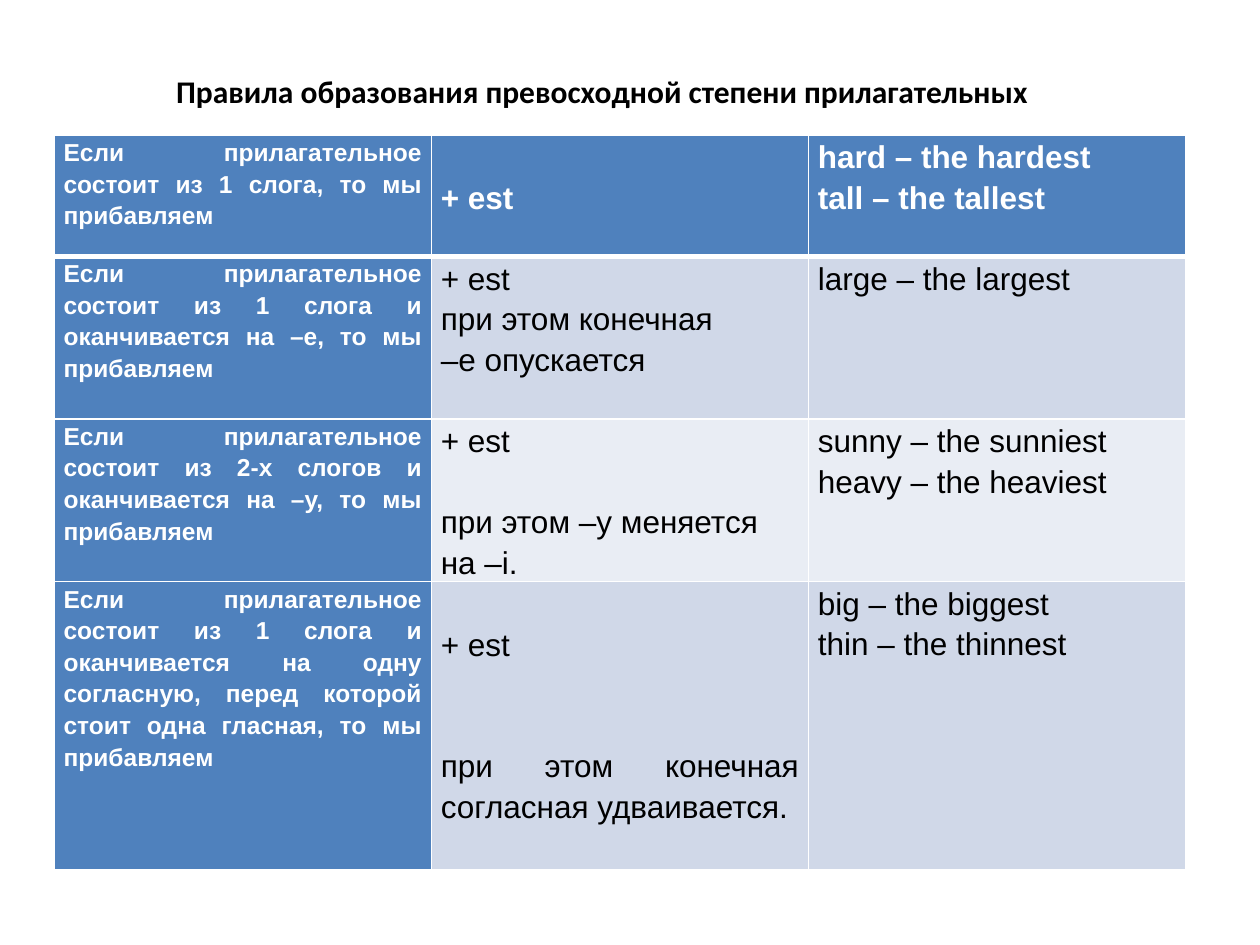
from pptx import Presentation
from pptx.dml.color import RGBColor
from pptx.enum.text import MSO_ANCHOR as Anchor, PP_ALIGN as Align
from pptx.oxml import parse_xml
from pptx.oxml.ns import nsdecls
from pptx.util import Inches, Pt

WIDTH, HEIGHT = 10, 7.5
BLUE, PALE, LIGHT = "4F81BD", "D0D8E8", "E9EDF4"
WHITE, BLACK = "FFFFFF", "000000"
LINE = 23.2  # height of one line of 18 pt text, in points
ROW_HEIGHTS = [0.96, 1.29, 1.29, 2.28]
COLUMN_SIZES = [14, 18, 18]  # text size of the rule, ending and example columns

TITLE = "Правила образования превосходной степени прилагательных"

# A cell is a list of (lines left free above, text); a row is rule, ending, examples
RULES = [
    [[(0, "Если прилагательное состоит из 1 слога, то мы прибавляем")],
     [(1, "+ est")],
     [(0, "hard – the hardest"), (0, "tall – the tallest")]],
    [[(0, "Если прилагательное состоит из 1 слога и оканчивается на –е, "
          "то мы прибавляем")],
     [(0, "+ est"), (0, "при этом конечная"), (0, "–е опускается")],
     [(0, "large – the largest")]],
    [[(0, "Если прилагательное состоит из 2-х слогов и оканчивается на –y, "
          "то мы прибавляем")],
     [(0, "+ est"), (1, "при этом –y меняется"), (0, "на –i.")],
     [(0, "sunny – the sunniest"), (0, "heavy – the heaviest")]],
    [[(0, "Если прилагательное состоит из 1 слога и оканчивается на одну согласную, "
          "перед которой стоит одна гласная, то мы прибавляем")],
     [(1, "+ est"), (2, "при этом конечная согласная удваивается.")],
     [(0, "big – the biggest"), (0, "thin – the thinnest")]],
]


def color(value):
    return RGBColor.from_string(value)


def write(paragraph, text, size=18, font="Arial", ink=BLACK, bold=False,
          align=None, spacing=None, before=None):
    paragraph.alignment = align
    paragraph.line_spacing = spacing
    if before:
        paragraph.space_before = Pt(before)
    run = paragraph.add_run()
    run.text = text
    run.font.size, run.font.name, run.font.bold = Pt(size), font, bold
    run.font.color.rgb = color(ink)


def set_borders(cell, top=1, bottom=1):
    """White borders on all sides; widths in points."""
    properties = cell._tc.get_or_add_tcPr()
    widths = {"L": 1, "R": 1, "T": top, "B": bottom}
    # Borders come before the fill in the cell's properties
    for index, (side, width) in enumerate(widths.items()):
        properties.insert(index, parse_xml(
            f'<a:ln{side} {nsdecls("a")} w="{Pt(width)}">'
            f'<a:solidFill><a:srgbClr val="{WHITE}"/></a:solidFill></a:ln{side}>'))


def fill_cell(cell, lines, background, **text_format):
    cell.fill.solid()
    cell.fill.fore_color.rgb = color(background)
    cell.vertical_anchor = Anchor.TOP
    cell.margin_left = cell.margin_right = Inches(0.075)
    # Free lines above the first paragraph become the top margin
    first_gap = lines[0][0]
    cell.margin_top, cell.margin_bottom = Pt(first_gap * LINE), 0
    frame = cell.text_frame
    for index, (gap, text) in enumerate(lines):
        paragraph = frame.add_paragraph() if index else frame.paragraphs[0]
        write(paragraph, text, align=Align.JUSTIFY, spacing=1.15,
              before=gap * LINE if index else None, **text_format)


def add_title(slide, left, top, width, height):
    box = slide.shapes.add_textbox(*map(Inches, (left, top, width, height)))
    box.text_frame.word_wrap = False
    write(box.text_frame.paragraphs[0], TITLE, font="Calibri", bold=True)


def add_rules_table(slide, left, top, width, height):
    table = slide.shapes.add_table(
        len(RULES), len(COLUMN_SIZES),
        *map(Inches, (left, top, width, height))).table
    for column in table.columns:
        column.width = Inches(width / len(COLUMN_SIZES))

    for row_index, (row, contents) in enumerate(zip(table.rows, RULES)):
        row.height = Inches(height * ROW_HEIGHTS[row_index] / sum(ROW_HEIGHTS))
        band = PALE if row_index % 2 else LIGHT
        for column_index, (cell, lines) in enumerate(zip(row.cells, contents)):
            # The first row and the first column are headings
            heading = row_index == 0 or column_index == 0
            fill_cell(cell, lines, BLUE if heading else band,
                      size=COLUMN_SIZES[column_index],
                      ink=WHITE if heading else BLACK, bold=heading)
            # A thick line parts the first row from the second
            set_borders(cell, top=3 if row_index == 1 else 1,
                        bottom=3 if row_index == 0 else 1)


def main():
    presentation = Presentation()
    presentation.slide_width = Inches(WIDTH)
    presentation.slide_height = Inches(HEIGHT)
    slide = presentation.slides.add_slide(presentation.slide_layouts[6])
    add_rules_table(slide, left=0.043 * WIDTH, top=0.143 * HEIGHT,
                    width=0.898 * WIDTH, height=0.777 * HEIGHT)
    add_title(slide, left=0.13 * WIDTH, top=0.07 * HEIGHT,
              width=0.7 * WIDTH, height=0.05 * HEIGHT)
    presentation.save("out.pptx")


if __name__ == "__main__":
    main()
